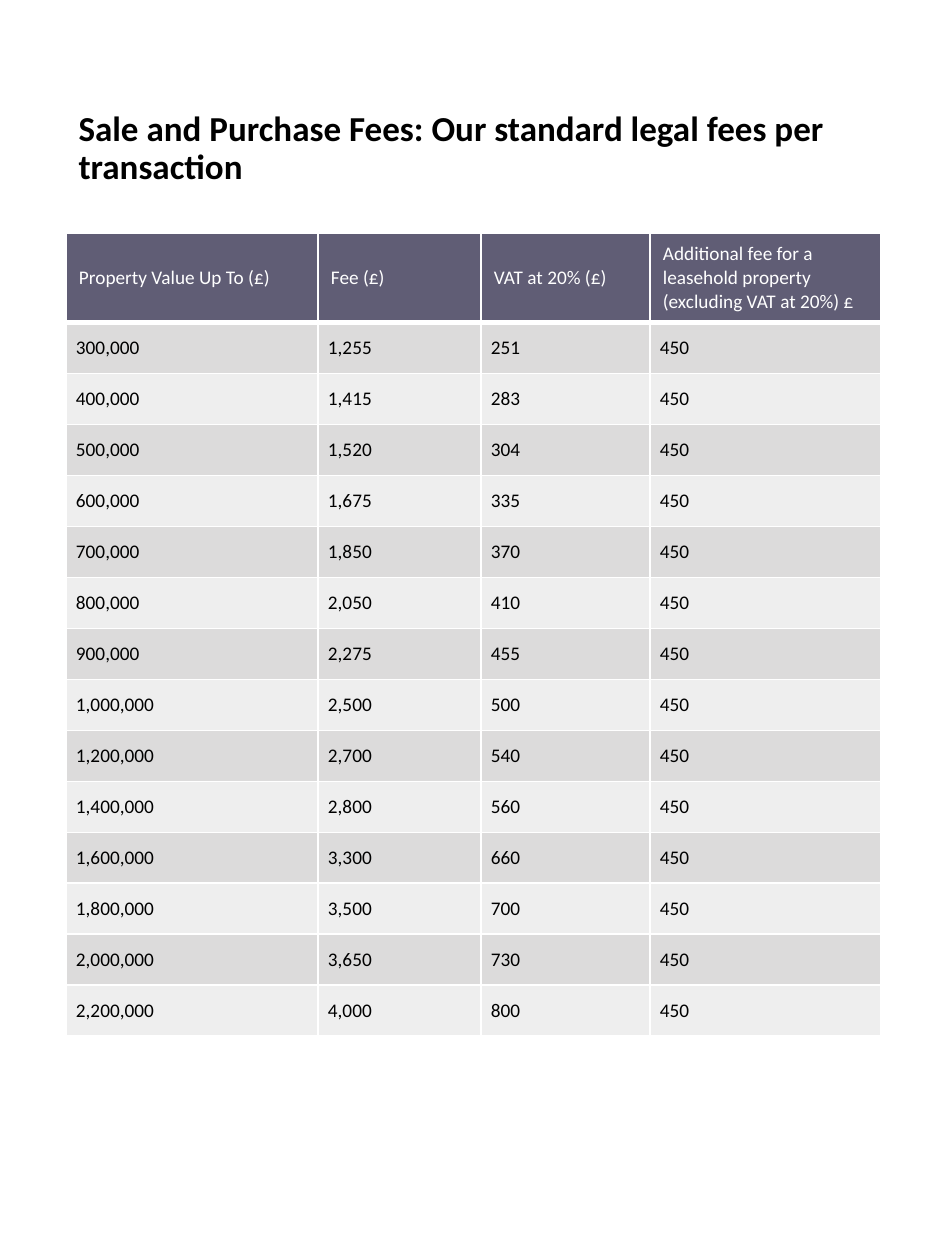
from dataclasses import dataclass

from lxml import etree
from pptx import Presentation
from pptx import util as u
from pptx.dml.color import RGBColor
from pptx.enum import text
from pptx.oxml.ns import qn

EMU_PER_PX = 914400 / 126
FONT = "Calibri"
COLORS = {
    "ink": "000000",
    "white": "FFFFFF",
    "header": "605D75",
    "odd": "DCDBDB",
    "even": "EEEEEE",
}
TITLE = "Sale and Purchase Fees: Our standard legal fees per transaction"
HEADINGS = (
    "Property Value Up To (£)",
    "Fee (£)",
    "VAT at 20% (£)",
    "Additional fee for a leasehold property (excluding VAT at 20%) £",
)
COLUMN_WIDTHS = (252, 163, 169, 231)
HEADER_HEIGHT = 89
ROW_HEIGHT = 51
LEFT, TABLE_TOP = 66, 233
LEASEHOLD_FEE = 450


@dataclass(frozen=True)
class FeeBand:
    value: int
    fee: int

    def texts(self) -> list[str]:
        amounts = (self.value, self.fee, self.fee // 5, LEASEHOLD_FEE)
        return [f"{amount:,}" for amount in amounts]


@dataclass(frozen=True)
class CellStyle:
    fill: str
    color: str
    inset_x: int
    inset_y: int
    top: int = 1
    bottom: int = 1


FEE_BANDS = (
    FeeBand(300000, 1255),
    FeeBand(400000, 1415),
    FeeBand(500000, 1520),
    FeeBand(600000, 1675),
    FeeBand(700000, 1850),
    FeeBand(800000, 2050),
    FeeBand(900000, 2275),
    FeeBand(1000000, 2500),
    FeeBand(1200000, 2700),
    FeeBand(1400000, 2800),
    FeeBand(1600000, 3300),
    FeeBand(1800000, 3500),
    FeeBand(2000000, 3650),
    FeeBand(2200000, 4000),
)


def px(n: int) -> u.Emu:
    return u.Emu(round(n * EMU_PER_PX))


def rgb(name: str) -> RGBColor:
    return RGBColor.from_string(COLORS[name])


def format_run(r, size: int, color: str, bold: bool = False) -> None:
    r.font.name = FONT
    r.font.size = u.Pt(size)
    r.font.bold = bold
    r.font.color.rgb = rgb(color)


def add_border(cell, side: str, points: int) -> None:
    tc_pr = cell._tc.get_or_add_tcPr()
    ln = etree.SubElement(tc_pr, qn(f"a:ln{side}"), w=str(u.Pt(points)))
    fill = etree.SubElement(ln, qn("a:solidFill"))
    etree.SubElement(fill, qn("a:srgbClr"), val=COLORS["white"])


def draw_cell(cell, content: str, style: CellStyle) -> None:
    for side, points in zip("LRTB", (1, 1, style.top, style.bottom)):
        add_border(cell, side, points)
    cell.fill.solid()
    cell.fill.fore_color.rgb = rgb(style.fill)
    cell.margin_left = cell.margin_right = px(style.inset_x)
    cell.margin_top = cell.margin_bottom = px(style.inset_y)
    cell.vertical_anchor = text.MSO_ANCHOR.MIDDLE
    cell.text_frame.text = content
    format_run(cell.text_frame.paragraphs[0].runs[0], 11, style.color)


def draw_row(table, index: int, texts, style: CellStyle) -> None:
    for column, content in enumerate(texts):
        draw_cell(table.cell(index, column), content, style)


def draw_title(s) -> None:
    sp = s.shapes.title
    sp.left, sp.top, sp.width, sp.height = map(px, (LEFT, 67, sum(COLUMN_WIDTHS), 165))
    tf = sp.text_frame
    tf.text = TITLE
    tf.word_wrap = True
    tf.auto_size = text.MSO_AUTO_SIZE.NONE
    tf.vertical_anchor = text.MSO_ANCHOR.MIDDLE
    p = tf.paragraphs[0]
    p.alignment = text.PP_ALIGN.LEFT
    p.line_spacing = 0.9
    p.space_before = u.Pt(0)
    format_run(p.runs[0], 20, "ink", bold=True)


def draw_fee_table(s) -> None:
    heights = [HEADER_HEIGHT] + [ROW_HEIGHT] * len(FEE_BANDS)
    table = s.shapes.add_table(
        len(heights), len(COLUMN_WIDTHS),
        px(LEFT), px(TABLE_TOP), px(sum(COLUMN_WIDTHS)), px(sum(heights)),
    ).table
    for column, width in zip(table.columns, COLUMN_WIDTHS):
        column.width = px(width)
    for row, height in zip(table.rows, heights):
        row.height = px(height)
    draw_row(table, 0, HEADINGS, CellStyle("header", "white", 13, 9, bottom=3))
    for index, band in enumerate(FEE_BANDS, start=1):
        fill = "odd" if index % 2 else "even"
        style = CellStyle(fill, "ink", 10, 5, top=3 if index == 1 else 1)
        draw_row(table, index, band.texts(), style)


def main() -> None:
    prs = Presentation()
    prs.slide_width, prs.slide_height = px(945), px(1260)
    s = prs.slides.add_slide(prs.slide_layouts.get_by_name("Title Only"))
    draw_title(s)
    draw_fee_table(s)
    prs.save("out.pptx")


if __name__ == "__main__":
    main()
